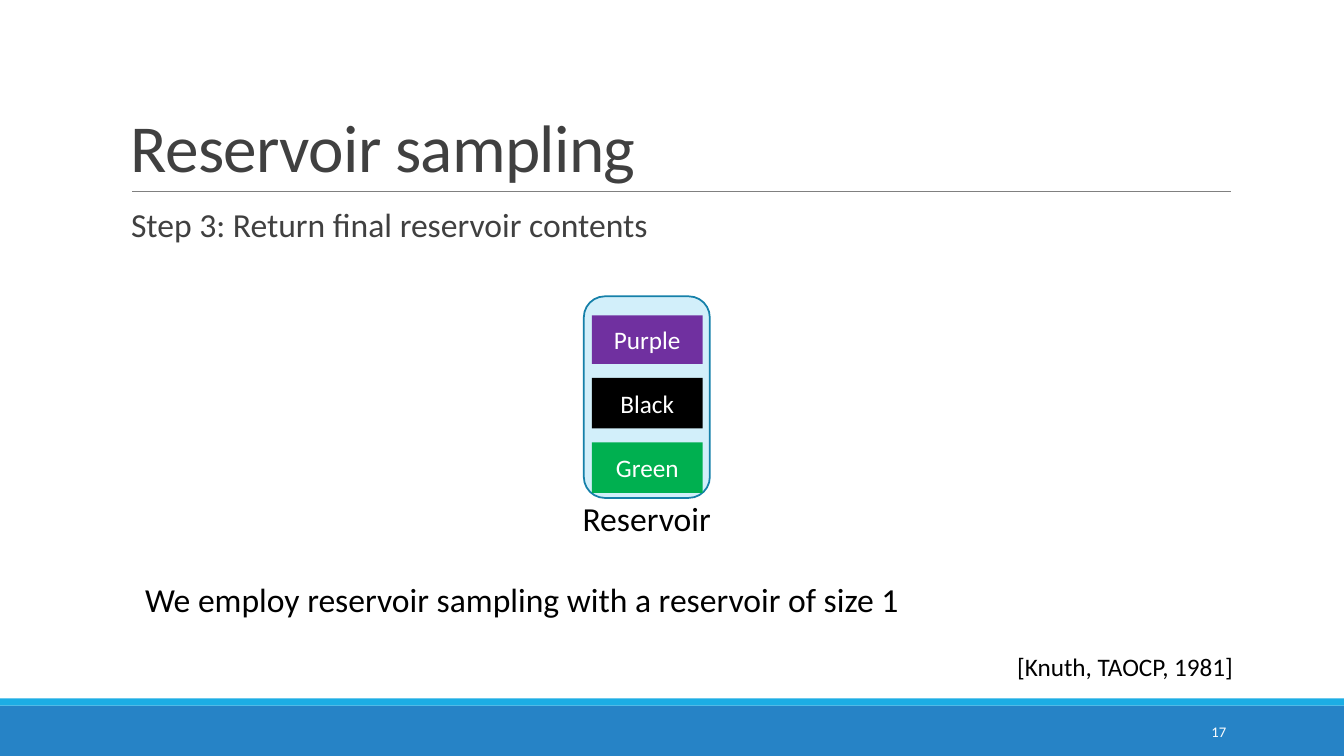
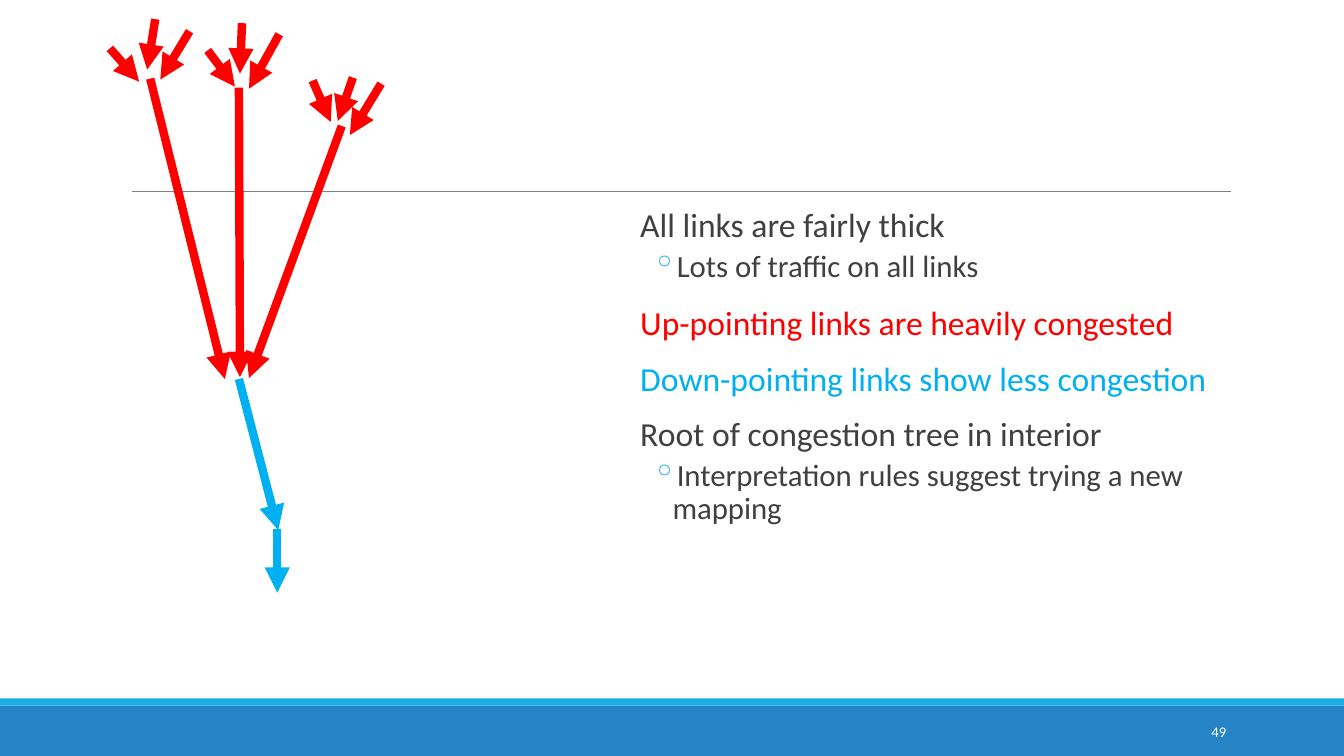
from lxml import etree
from pptx import Presentation
from pptx.dml.color import RGBColor
from pptx.enum.shapes import MSO_CONNECTOR, MSO_SHAPE
from pptx.enum.text import MSO_ANCHOR, PP_ALIGN
from pptx.oxml.ns import qn
from pptx.util import Inches, Pt

RECT, ROUNDED = MSO_SHAPE.RECTANGLE, MSO_SHAPE.ROUNDED_RECTANGLE
STRAIGHT = MSO_CONNECTOR.STRAIGHT
TOP, MIDDLE, BOTTOM = MSO_ANCHOR.TOP, MSO_ANCHOR.MIDDLE, MSO_ANCHOR.BOTTOM
LEFT, CENTER, RIGHT = PP_ALIGN.LEFT, PP_ALIGN.CENTER, PP_ALIGN.RIGHT

FONT = "Calibri"
BLUE = RGBColor(0x26, 0x83, 0xC6)
CYAN = RGBColor(0x1C, 0xAD, 0xE4)
SKY = RGBColor(0x00, 0xB0, 0xF0)
PALE = RGBColor(0xD2, 0xEF, 0xFA)
TEAL = RGBColor(0x15, 0x80, 0xA9)
GRAY = RGBColor(0x80, 0x80, 0x80)
DARK = RGBColor(0x40, 0x40, 0x40)
RED = RGBColor(0xFF, 0x00, 0x00)
GREEN = RGBColor(0x00, 0xB0, 0x50)
PURPLE = RGBColor(0x70, 0x30, 0xA0)
BLACK = RGBColor(0x00, 0x00, 0x00)
WHITE = RGBColor(0xFF, 0xFF, 0xFF)


def add_box(s, x, y, w, h, fill=None, line=None, shape=RECT, anchor=TOP, margin=0.1):
    """Add a filled shape, or a plain text box when there is no fill."""
    place = [Inches(v) for v in (x, y, w, h)]
    if fill is None:
        sp = s.shapes.add_textbox(*place)
    else:
        sp = s.shapes.add_shape(shape, *place)
        sp.shadow.inherit = False
        sp.fill.solid()
        sp.fill.fore_color.rgb = fill
        if line is None:
            sp.line.fill.background()
        else:
            sp.line.color.rgb = line
            sp.line.width = Pt(1.25)
    tf = sp.text_frame
    tf.word_wrap = True
    tf.vertical_anchor = anchor
    tf.margin_left = tf.margin_right = Inches(margin)
    return sp


def write(sp, text, size=24, color=BLACK, align=LEFT, spacing=1.0, before=0, after=0,
          indent=0, bullet=None, tracking=None):
    """Fill the first empty paragraph of a shape, or append a new one."""
    tf = sp.text_frame
    p = tf.add_paragraph() if tf.text else tf.paragraphs[0]
    p.alignment = align
    p.line_spacing = spacing
    p.space_before, p.space_after = Pt(before), Pt(after)
    pPr = p._p.get_or_add_pPr()
    pPr.set("marL", str(Inches(indent)))
    if bullet:
        pPr.set("indent", str(Inches(-0.2)))
        clr = etree.SubElement(pPr, qn("a:buClr"))
        etree.SubElement(clr, qn("a:srgbClr"), val=str(CYAN))
        etree.SubElement(pPr, qn("a:buChar"), char=bullet)
    r = p.add_run()
    r.text = text
    r.font.name, r.font.size = FONT, Pt(size)
    r.font.color.rgb = color
    if tracking is not None:
        r._r.get_or_add_rPr().set("spc", str(tracking))


BODY = dict(color=DARK, spacing=0.9, before=12, after=2, indent=0.1)
SUB = dict(BODY, size=22, before=2, after=4, indent=0.42, bullet="◦")

# Lines: start x, y, end x, y, colour, width, arrowhead
TITLE_RULE = (1.31, 1.9, 12.21, 1.9, GRAY, 0.5, False)
down_links = [(2.37, 3.76, 2.76, 5.26), (2.75, 5.25, 2.75, 5.88)]
up_links = [
    (3.39, 1.25, 2.47, 3.75), (2.37, 0.87, 2.38, 3.74), (1.49, 0.78, 2.23, 3.76),
    (3.78, 0.83, 3.47, 1.34), (3.1, 0.8, 3.28, 1.21), (3.5, 0.77, 3.35, 1.2),
    (2.77, 0.34, 2.47, 0.88), (2.06, 0.5, 2.33, 0.86), (2.4, 0.23, 2.38, 0.73),
    (1.88, 0.31, 1.59, 0.79), (1.09, 0.48, 1.38, 0.81), (1.54, 0.19, 1.46, 0.69),
]
tree = [(*ends, color, 6, True)
        for links, color in ((down_links, SKY), (up_links, RED)) for ends in links]

prs = Presentation()
prs.slide_width, prs.slide_height = Inches(13.33), Inches(7.5)

# Shared footer bands, page number and rule, then each slide's arrows
for number, arrows in (("17", []), ("49", tree)):
    s = prs.slides.add_slide(prs.slide_layouts[6])
    add_box(s, 0, 7, 13.33, 0.5, fill=BLUE)
    add_box(s, 0, 6.93, 13.33, 0.07, fill=CYAN)
    write(add_box(s, 10.83, 7.06, 1.43, 0.4, anchor=MIDDLE), number,
          size=10.5, color=WHITE, align=RIGHT)
    for x1, y1, x2, y2, color, width, head in [TITLE_RULE] + arrows:
        c = s.shapes.add_connector(STRAIGHT, Inches(x1), Inches(y1), Inches(x2), Inches(y2))
        c.line.color.rgb = color
        c.line.width = Pt(width)
        if head:
            etree.SubElement(c.line._get_or_add_ln(), qn("a:tailEnd"), type="triangle")
        etree.SubElement(c._element.spPr, qn("a:effectLst"))

sampling, congestion = prs.slides

# Reservoir sampling
write(add_box(sampling, 1.2, 0.31, 11, 1.59, anchor=BOTTOM), "Reservoir sampling",
      size=48, color=DARK, spacing=0.85, tracking=-50)
write(add_box(sampling, 1.2, 2.02, 11, 4.4, margin=0),
      "Step 3: Return final reservoir contents", **BODY)
add_box(sampling, 5.79, 2.94, 1.25, 2, fill=PALE, line=TEAL, shape=ROUNDED)
for name, color, y, h in (("Purple", PURPLE, 3.13, 0.48), ("Black", BLACK, 3.75, 0.5),
                          ("Green", GREEN, 4.39, 0.5)):
    write(add_box(sampling, 5.87, y, 1.1, h, fill=color, anchor=MIDDLE), name,
          size=18, color=WHITE, align=CENTER)
write(add_box(sampling, 5.68, 4.89, 1.49, 0.5), "Reservoir")
write(add_box(sampling, 1.34, 5.69, 7.75, 0.5),
      "We employ reservoir sampling with a reservoir of size 1")
write(add_box(sampling, 9.99, 6.41, 2.81, 0.4), "[Knuth, TAOCP, 1981]", size=18)

# Congestion tree
notes = add_box(congestion, 6.25, 2.02, 5.95, 4.4, margin=0)
for text, style in (
    ("All links are fairly thick", BODY),
    ("Lots of traffic on all links", SUB),
    ("Up-pointing links are heavily congested", dict(BODY, color=RED)),
    ("Down-pointing links show less congestion", dict(BODY, color=SKY)),
    ("Root of congestion tree in interior", BODY),
    ("Interpretation rules suggest trying a new mapping", SUB),
):
    write(notes, text, **style)

prs.save("out.pptx")
